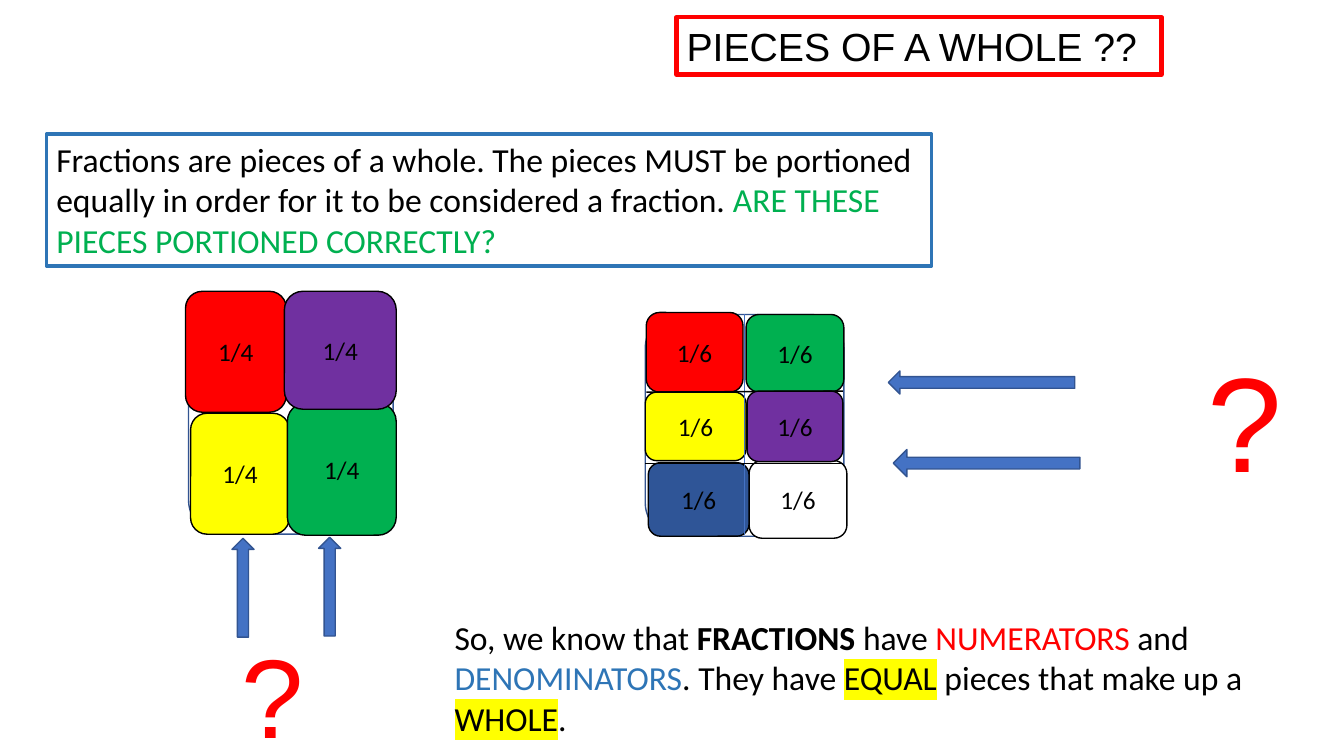
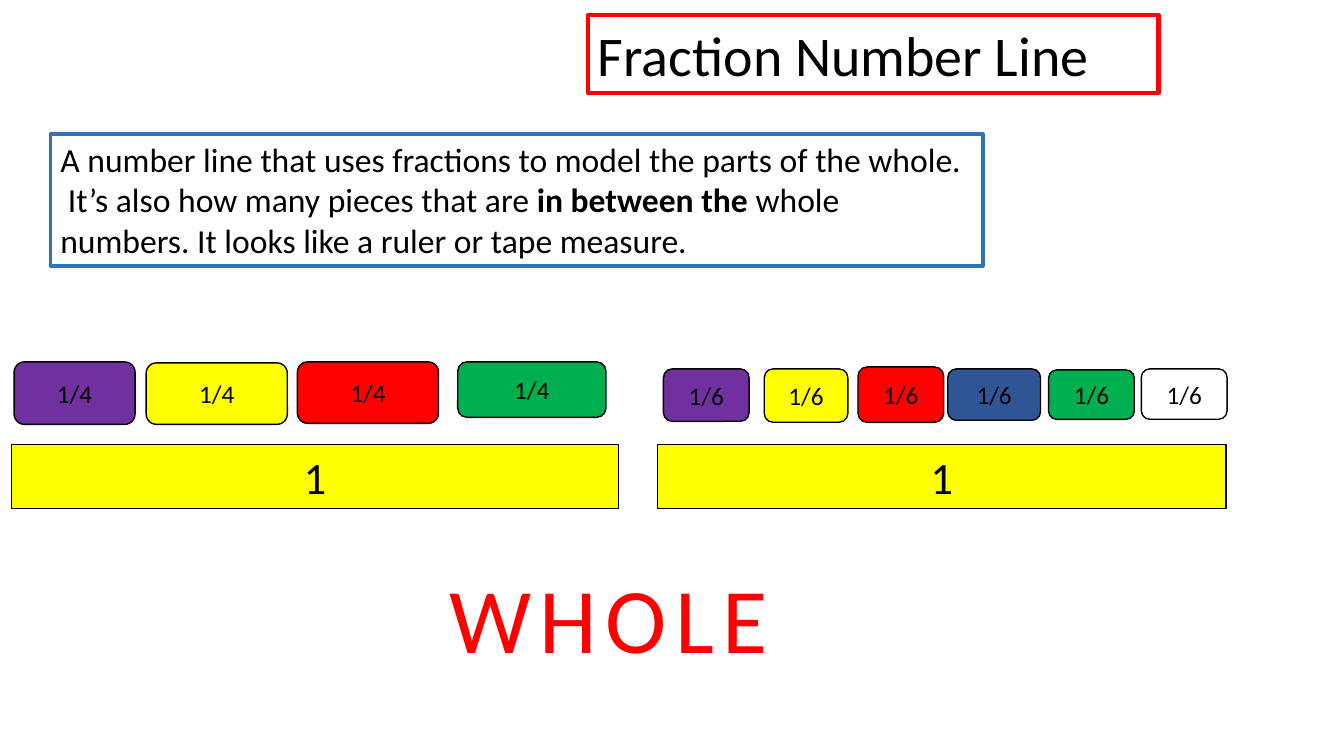
from lxml.etree import SubElement
from pptx import Presentation
from pptx.dml.color import RGBColor
from pptx.enum.shapes import MSO_CONNECTOR as Link, MSO_SHAPE as Kind
from pptx.enum.text import MSO_ANCHOR as Anchor, MSO_AUTO_SIZE as Fit, PP_ALIGN as Align
from pptx.oxml.ns import qn
from pptx.util import Inches, Pt

BLACK, WHITE, RED, GREEN = "000000", "FFFFFF", "FF0000", "00B050"
YELLOW, PURPLE, NAVY = "FFFF00", "7030A0", "2F5597"
BLUE, EDGE, FRAME = "4472C4", "325491", "2E75B6"

# Text is a list of paragraphs; each paragraph is a list of (words, format) runs.
PIECES = {
    "title": ("PIECES OF A WHOLE ??", (6.71, 0.17, 4.81, 0.57), 28, "Arial"),
    "intro": ((0.46, 1.33, 8.78, 1.31), [[
        ("Fractions are pieces of a whole. The pieces MUST be portioned equally "
         "in order for it to be considered a fraction. ", {}),
        ("ARE THESE PIECES PORTIONED CORRECTLY?", {"color": GREEN})]]),
}
LINE = {
    "title": ("Fraction Number Line", (5.83, 0.15, 5.66, 0.77), 40, "Calibri"),
    "intro": ((0.5, 1.33, 9.25, 1.31), [
        [("A number line that uses fractions to model the parts of the whole.", {})],
        [(" It’s also how many pieces that are ", {}),
         ("in between the ", {"bold": True}),
         ("whole numbers. It looks like a ruler or tape measure.", {})]]),
}
SUM = [[
    ("So, we know that ", {}), ("FRACTIONS", {"bold": True}), (" have ", {}),
    ("NUMERATORS", {"color": RED}), (" and ", {}),
    ("DENOMINATORS", {"color": FRAME}), (". They have ", {}),
    ("EQUAL", {"mark": YELLOW}), (" pieces that make up a ", {}),
    ("WHOLE", {"mark": YELLOW}), (".", {})]]

# Tiles: fill, left, top, width, height, from back to front.
WHOLES = [(6.4, 3.12, 1.97, 2.2), (1.87, 3, 2.03, 2.3)]
FOURTHS = [
    (YELLOW, 1.89, 4.1, 0.98, 1.2), (RED, 1.84, 2.89, 1, 1.2),
    (GREEN, 2.85, 4, 1.08, 1.31), (PURPLE, 2.82, 2.89, 1.11, 1.17)]
SIXTHS = [
    (WHITE, 7.43, 4.57, 0.97, 0.77), (GREEN, 7.4, 3.12, 0.97, 0.77),
    (RED, 6.41, 3.1, 0.96, 0.79), (NAVY, 6.43, 4.59, 1, 0.73),
    (YELLOW, 6.4, 3.89, 1, 0.68)]
TOP_SIXTH = [(PURPLE, 7.41, 3.88, 0.95, 0.7)]
CUTS = [
    (7.38, 3.12, 7.38, 5.31, BLUE, 0.5), (6.4, 4.6, 8.36, 4.6, BLACK, 1),
    (6.41, 3.89, 8.36, 3.88, BLACK, 1)]
ARROWS = [
    (Kind.LEFT_ARROW, (8.81, 3.68, 1.85, 0.23), 0.5),
    (Kind.LEFT_ARROW, (8.86, 4.46, 1.85, 0.27), 0.43),
    (Kind.UP_ARROW, (2.3, 5.34, 0.22, 0.98), 0.5),
    (Kind.UP_ARROW, (3.16, 5.33, 0.22, 0.98), 0.5)]
MARKS = [((11.88, 3.3, 1.16, 1.72), 96), ((2.3, 6.17, 1.16, 1.45), 80)]

ROW_SIXTHS = [
    (WHITE, 11.32, 3.66, 0.85, 0.5), (GREEN, 10.4, 3.67, 0.85, 0.49),
    (RED, 8.51, 3.64, 0.85, 0.55), (NAVY, 9.4, 3.66, 0.92, 0.51),
    (PURPLE, 6.58, 3.66, 0.85, 0.52), (YELLOW, 7.58, 3.66, 0.83, 0.53)]
ROW_FOURTHS = [
    (PURPLE, 0.14, 3.59, 1.2, 0.62), (YELLOW, 1.45, 3.6, 1.4, 0.61),
    (GREEN, 4.54, 3.59, 1.47, 0.55), (RED, 2.95, 3.59, 1.4, 0.61)]
BARS = [(6.52, 4.41, 5.64, 0.64), (0.11, 4.41, 6.03, 0.64)]


def rgb(code):
    return RGBColor.from_string(code)


def style(run, size, font="Calibri", color=BLACK, bold=False, mark=None, space=0):
    """Format one run; mark is the highlight, space the tracking in points."""
    face = run.font
    face.size, face.name, face.bold = Pt(size), font, bold
    face.color.rgb = rgb(color)
    props = run._r.get_or_add_rPr()
    if space:
        props.set("spc", str(space * 100))
    if mark:
        tag = SubElement(props, qn("a:highlight"))
        SubElement(tag, qn("a:srgbClr")).set("val", mark)
        props.find(qn("a:solidFill")).addnext(tag)


def write(shape, text, size, align=Align.LEFT, anchor=Anchor.TOP, **fmt):
    """Fill a shape with a plain string or a list of paragraphs of runs."""
    frame = shape.text_frame
    frame.word_wrap, frame.auto_size = True, Fit.NONE
    frame.vertical_anchor = anchor
    paras = [[(text, {})]] if isinstance(text, str) else text
    for i, runs in enumerate(paras):
        para = frame.add_paragraph() if i else frame.paragraphs[0]
        para.alignment = align
        for words, more in runs:
            run = para.add_run()
            run.text = words
            style(run, size, **{**fmt, **more})


def outline(shape, color, width):
    shape.line.color.rgb = rgb(color)
    shape.line.width = Pt(width)


def shape(slide, kind, box, fill, edge=BLACK, width=1):
    item = slide.shapes.add_shape(kind, *map(Inches, box))
    item.shadow.inherit = False
    if fill:
        item.fill.solid()
        item.fill.fore_color.rgb = rgb(fill)
    else:
        item.fill.background()
    outline(item, edge, width)
    return item


def label(slide, box, text, size, **fmt):
    write(slide.shapes.add_textbox(*map(Inches, box)), text, size, **fmt)


def tiles(slide, name, parts):
    for fill, *box in parts:
        tile = shape(slide, Kind.ROUNDED_RECTANGLE, box, fill)
        write(tile, name, 18, Align.CENTER, Anchor.MIDDLE)


def cut(slide, x1, y1, x2, y2, color, width):
    line = slide.shapes.add_connector(
        Link.STRAIGHT, *map(Inches, (x1, y1, x2, y2)))
    outline(line, color, width)
    SubElement(line._element.spPr, qn("a:effectLst"))


def start(deck, title, intro):
    """Add a slide with its red-framed title and blue-framed definition."""
    slide = deck.slides.add_slide(deck.slide_layouts[5])
    text, box, size, font = title
    head = slide.shapes.title
    head.left, head.top, head.width, head.height = map(Inches, box)
    outline(head, RED, 3)
    write(head, text, size, font=font)
    box, paras = intro
    write(shape(slide, Kind.RECTANGLE, box, None, FRAME, 2.25), paras, 24)
    return slide


def pieces(deck):
    slide = start(deck, **PIECES)
    for box in WHOLES:
        shape(slide, Kind.ROUNDED_RECTANGLE, box, WHITE, EDGE)
    tiles(slide, "1/4", FOURTHS)
    tiles(slide, "1/6", SIXTHS)
    for part in CUTS:
        cut(slide, *part)
    tiles(slide, "1/6", TOP_SIXTH)
    for kind, box, shaft in ARROWS:
        shape(slide, kind, box, BLUE, EDGE).adjustments[0] = shaft
    for box, size in MARKS:
        label(slide, box, "?", size, font="Arial", color=RED)
    label(slide, (4.41, 6.07, 8.26, 1.31), SUM, 24)


def number_line(deck):
    slide = start(deck, **LINE)
    tiles(slide, "1/6", ROW_SIXTHS)
    tiles(slide, "1/4", ROW_FOURTHS)
    for box in BARS:
        bar = shape(slide, Kind.RECTANGLE, box, YELLOW, width=0.75)
        write(bar, "1", 32, Align.CENTER)
    label(slide, (2.44, 5.51, 7.19, 1.21), "WHOLE", 66, align=Align.CENTER,
          anchor=Anchor.MIDDLE, color=RED, space=6)


def main():
    deck = Presentation()
    deck.slide_width, deck.slide_height = Inches(13.33), Inches(7.5)
    pieces(deck)
    number_line(deck)
    deck.save("out.pptx")


if __name__ == "__main__":
    main()
